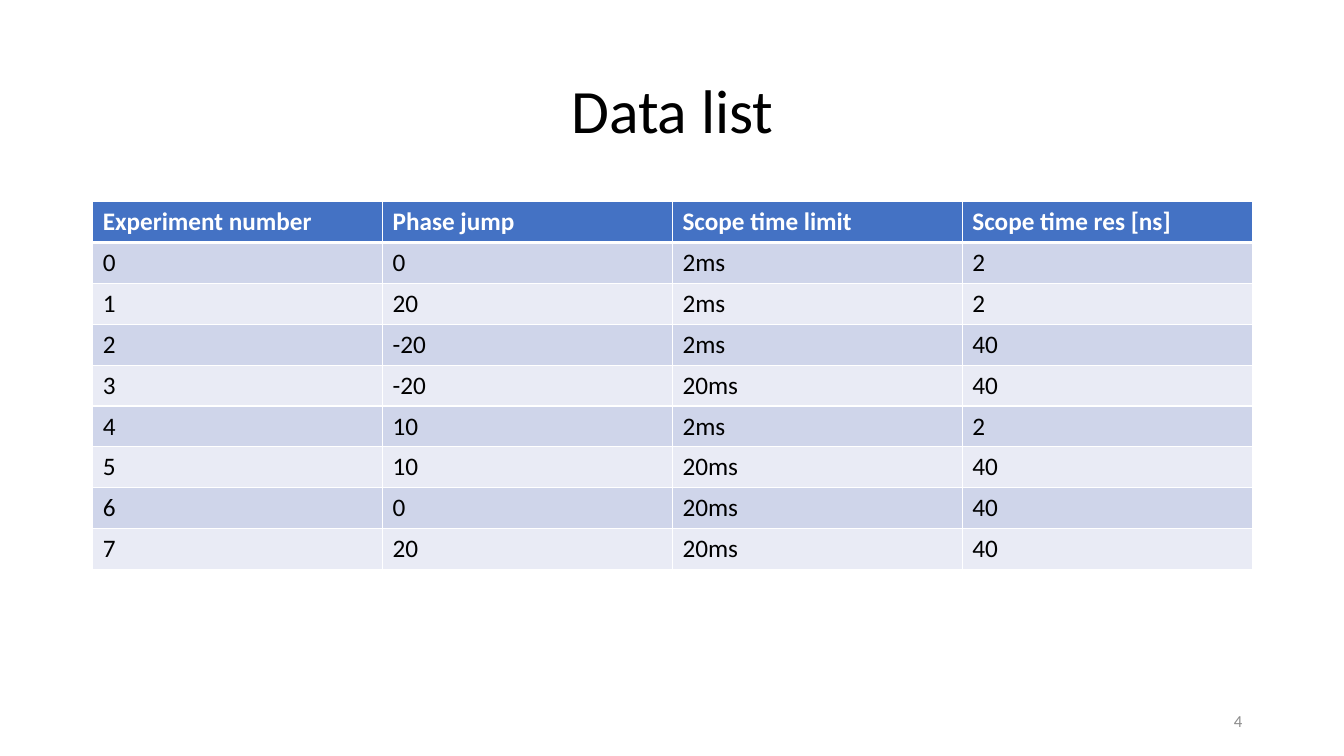
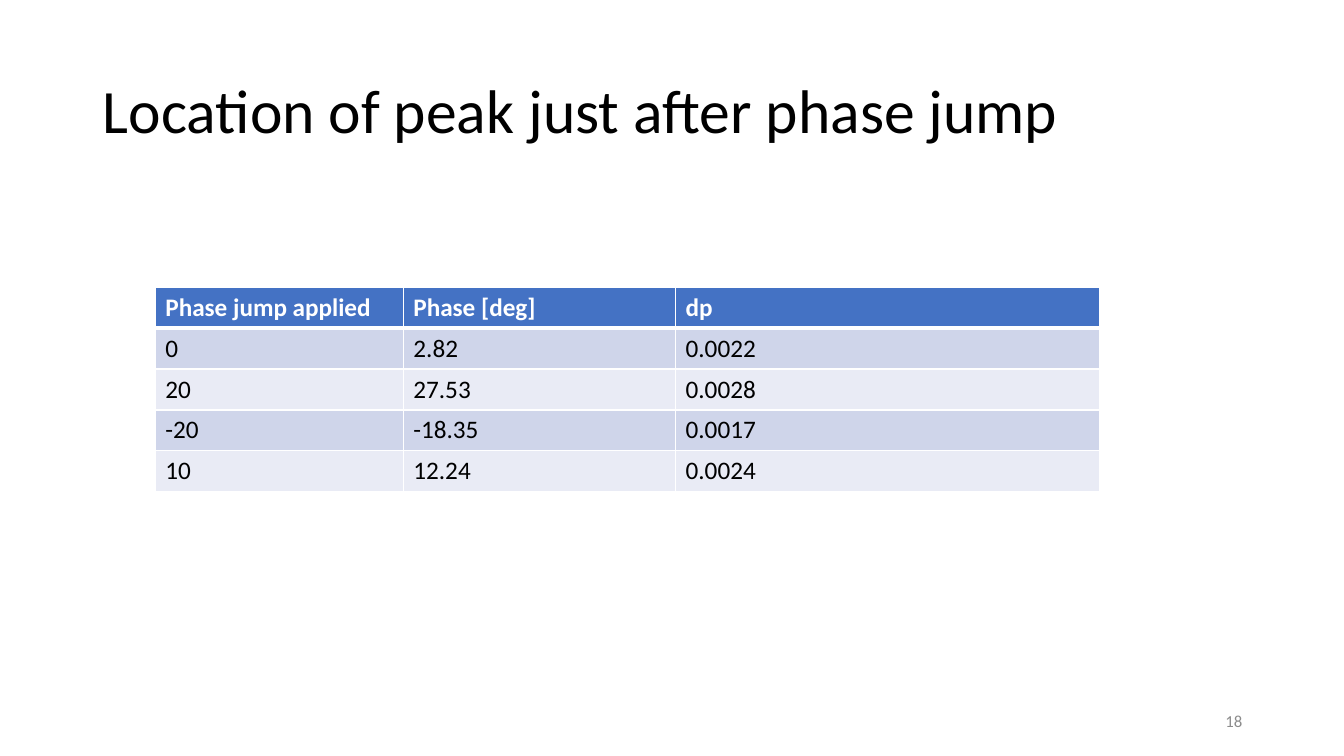
import pptx
import pptx.dml.color
import pptx.enum.text
import pptx.oxml
import pptx.oxml.ns
import pptx.util
from pptx.dml.color import RGBColor
from pptx.enum.text import MSO_ANCHOR, MSO_AUTO_SIZE, PP_ALIGN
from pptx.util import Inches

FONT = "Calibri"
BLACK = RGBColor(0x00, 0x00, 0x00)
WHITE = RGBColor(0xFF, 0xFF, 0xFF)
GRAY = RGBColor(0x8C, 0x8C, 0x8C)
HEADER_BLUE = RGBColor(0x44, 0x72, 0xC4)
BAND_COLORS = (RGBColor(0xCF, 0xD5, 0xEA), RGBColor(0xE9, 0xEB, 0xF5))

TITLE_ONLY_LAYOUT = 5
MARGIN = 0.92
CONTENT_WIDTH = 11.5
ROW_HEIGHT = Inches(3.65 / 9)
THIN_BORDER = 1
HEADER_BORDER = 3

EXPERIMENTS = [
    ("Experiment number", "Phase jump", "Scope time limit", "Scope time res [ns]"),
    ("0", "0", "2ms", "2"),
    ("1", "20", "2ms", "2"),
    ("2", "-20", "2ms", "40"),
    ("3", "-20", "20ms", "40"),
    ("4", "10", "2ms", "2"),
    ("5", "10", "20ms", "40"),
    ("6", "0", "20ms", "40"),
    ("7", "20", "20ms", "40"),
]
PEAKS = [
    ("Phase jump applied", "Phase [deg]", "dp"),
    ("0", "2.82", "0.0022"),
    ("20", "27.53", "0.0028"),
    ("-20", "-18.35", "0.0017"),
    ("10", "12.24", "0.0024"),
]


def set_text(text_frame, text, size, color, bold=False, alignment=PP_ALIGN.LEFT):
    text_frame.text = text
    paragraph = text_frame.paragraphs[0]
    paragraph.alignment = alignment
    font = paragraph.runs[0].font
    font.name = FONT
    font.size = pptx.util.Pt(size)
    font.bold = bold
    font.color.rgb = color


def set_borders(cell, top, bottom):
    """Draw white borders; this must come before the cell's fill."""
    properties = cell._tc.get_or_add_tcPr()
    widths = {"lnL": THIN_BORDER, "lnR": THIN_BORDER, "lnT": top, "lnB": bottom}
    for tag, width in widths.items():
        properties.append(pptx.oxml.parse_xml(
            f'<a:{tag} {pptx.oxml.ns.nsdecls("a")} w="{pptx.util.Pt(width)}">'
            f'<a:solidFill><a:srgbClr val="{WHITE}"/></a:solidFill></a:{tag}>'
        ))


def add_table(slide, left, top, column_widths, rows):
    table = slide.shapes.add_table(
        len(rows), len(column_widths), Inches(left), Inches(top),
        Inches(sum(column_widths)), ROW_HEIGHT * len(rows),
    ).table
    for column, width in zip(table.columns, column_widths):
        column.width = Inches(width)
    for row_index, values in enumerate(rows):
        header = row_index == 0
        fill_color = HEADER_BLUE if header else BAND_COLORS[(row_index - 1) % 2]
        top_border = HEADER_BORDER if row_index == 1 else THIN_BORDER
        bottom_border = HEADER_BORDER if header else THIN_BORDER
        for column_index, value in enumerate(values):
            cell = table.cell(row_index, column_index)
            set_borders(cell, top_border, bottom_border)
            cell.fill.solid()
            cell.fill.fore_color.rgb = fill_color
            set_text(cell.text_frame, value, 18, WHITE if header else BLACK, header)


def add_slide(presentation, title_text, number, alignment=PP_ALIGN.LEFT):
    """Add a slide with its title and slide number."""
    slide = presentation.slides.add_slide(presentation.slide_layouts[TITLE_ONLY_LAYOUT])
    title = slide.shapes.title
    title.left, title.top = Inches(MARGIN), Inches(0.4)
    title.width, title.height = Inches(CONTENT_WIDTH), Inches(1.45)
    title.text_frame.auto_size = MSO_AUTO_SIZE.NONE
    title.text_frame.vertical_anchor = MSO_ANCHOR.MIDDLE
    set_text(title.text_frame, title_text, 44, BLACK, alignment=alignment)
    title.text_frame.paragraphs[0].line_spacing = 0.9

    number_box = slide.shapes.add_textbox(Inches(9.42), Inches(6.95), Inches(3), Inches(0.4))
    number_box.text_frame.word_wrap = True
    number_box.text_frame.vertical_anchor = MSO_ANCHOR.MIDDLE
    set_text(number_box.text_frame, str(number), 12, GRAY, alignment=PP_ALIGN.RIGHT)
    return slide


def main():
    presentation = pptx.Presentation()
    presentation.slide_width = Inches(13.33)
    presentation.slide_height = Inches(7.5)

    slide = add_slide(presentation, "Data list", 4, PP_ALIGN.CENTER)
    add_table(slide, MARGIN, 2, [CONTENT_WIDTH / 4] * 4, EXPERIMENTS)

    slide = add_slide(presentation, "Location of peak just after phase jump", 18)
    add_table(slide, 1.54, 2.85, [2.46, 2.7, 4.21], PEAKS)

    presentation.save("out.pptx")


if __name__ == "__main__":
    main()
